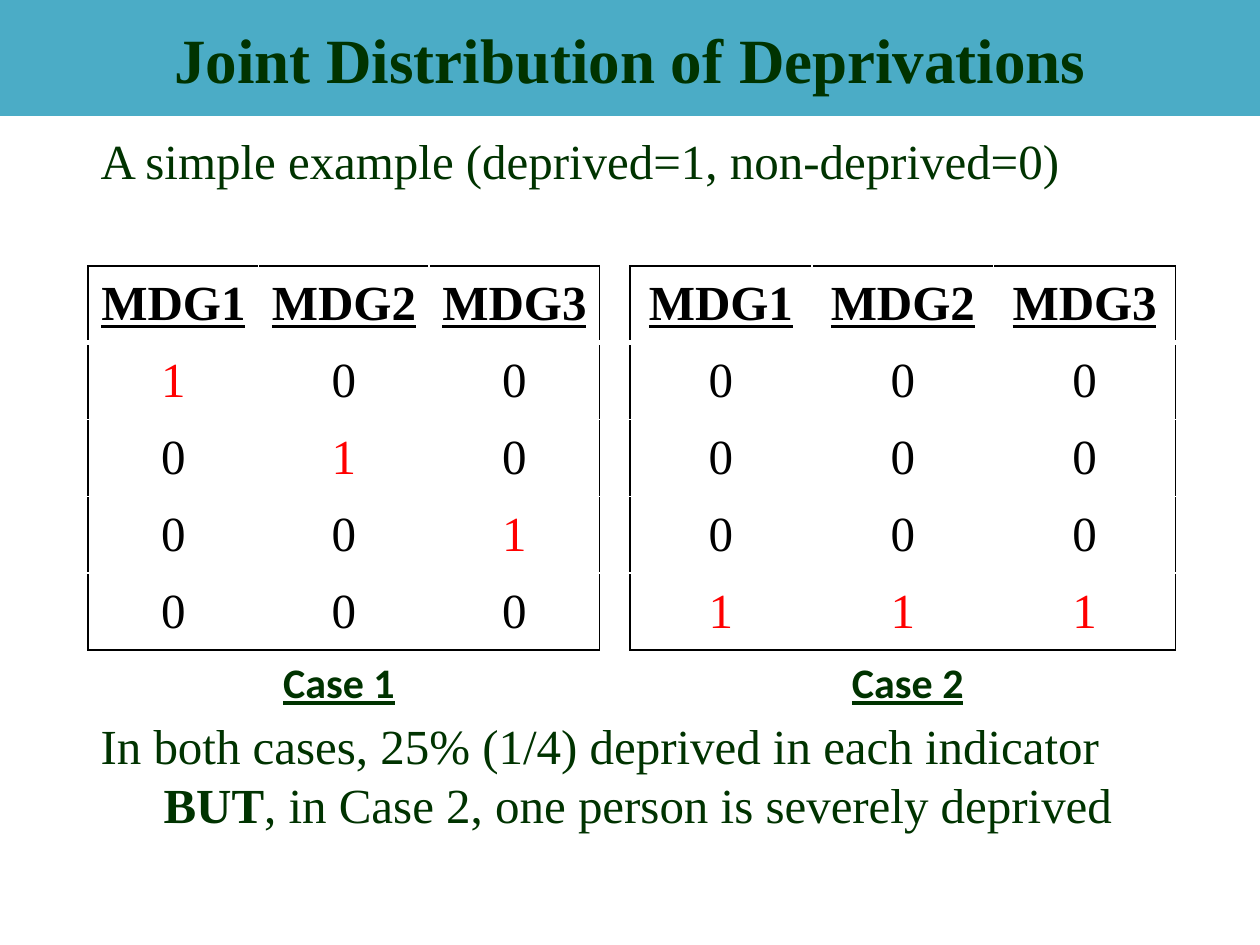
from dataclasses import dataclass
from lxml import etree
from pptx import Presentation
from pptx.dml.color import RGBColor
from pptx.enum.shapes import MSO_SHAPE
from pptx.enum.text import MSO_ANCHOR, PP_ALIGN
from pptx.oxml.ns import qn
from pptx.slide import Slide
from pptx.util import Inches, Pt

RECT = MSO_SHAPE.RECTANGLE
MIDDLE = MSO_ANCHOR.MIDDLE
LEFT, CENTER = PP_ALIGN.LEFT, PP_ALIGN.CENTER
INK = {"green": "003300", "teal": "4BACC6", "black": "000000",
       "red": "FF0000", "white": "FFFFFF"}
SERIF, SANS = "Times New Roman", "Calibri"
HEADS = ["MDG1", "MDG2", "MDG3"]
CASES = [
    ("Case 1", 7, 40.6, 7, 39.8, ["100", "010", "001", "000"]),
    ("Case 2", 50, 43.3, 50.8, 42.5, ["000", "000", "000", "111"]),
]


def hue(name):
    """Return the named colour."""
    return RGBColor.from_string(INK[name])


def write(frame, text, font=SERIF, size=28, color="green", bold=False,
          under=False, align=LEFT):
    """Fill a frame; lines become paragraphs and * toggles bold."""
    for row, line in enumerate(text.split("\n")):
        para = frame.add_paragraph() if row else frame.paragraphs[0]
        para.alignment = align
        for part, words in enumerate(line.split("*")):
            run = para.add_run()
            run.text = words
            face = run.font
            face.name, face.size = font, Pt(size)
            face.bold, face.underline = bold or part % 2 == 1, under
            face.color.rgb = hue(color)


def edge(cell, sides):
    """Draw the borders of a cell from (side, colour, points) rows."""
    props = cell._tc.get_or_add_tcPr()
    for spot, (side, color, width) in enumerate(sides):
        line = etree.Element(qn("a:ln" + side), w=str(Pt(width)))
        fill = etree.SubElement(line, qn("a:solidFill"))
        etree.SubElement(fill, qn("a:srgbClr"), val=INK[color])
        props.insert(spot, line)


@dataclass
class Page:
    """Hold the slide and its grid of 100 columns by 75 rows."""
    slide: Slide
    unit: int

    def place(self, *spans):
        """Turn grid spans into lengths."""
        return [round(span * self.unit) for span in spans]

    def banner(self, box, text):
        """Add a filled title band."""
        band = self.slide.shapes.add_shape(RECT, *self.place(*box))
        band.shadow.inherit = False
        band.fill.solid()
        band.fill.fore_color.rgb = hue("teal")
        band.line.fill.background()
        band.text_frame.vertical_anchor = MIDDLE
        write(band.text_frame, text, size=36, bold=True, align=CENTER)

    def note(self, box, text, **style):
        """Add a wrapped text box."""
        frame = self.slide.shapes.add_textbox(*self.place(*box)).text_frame
        frame.word_wrap = True
        write(frame, text, **style)

    def grid(self, box, rows):
        """Add a table framed in black with white inner lines."""
        high, wide = len(rows), len(rows[0])
        table = self.slide.shapes.add_table(high, wide, *self.place(*box)).table
        for r, row in enumerate(rows):
            for c, text in enumerate(row):
                cell, head = table.cell(r, c), r == 0
                cell.vertical_anchor = MIDDLE
                cell.fill.solid()
                cell.fill.fore_color.rgb = hue("white")
                write(cell.text_frame, text, bold=head, under=head,
                      color="red" if text == "1" else "black", align=CENTER)
                outer = {"L": c == 0, "R": c == wide - 1,
                         "T": head, "B": r == high - 1}
                edge(cell, [(side, "black" if out else "white",
                             3 if head and side == "B" else 1)
                            for side, out in outer.items()])


def main():
    """Build and save the slide."""
    deck = Presentation()
    deck.slide_width, deck.slide_height = Inches(10), Inches(7.5)
    page = Page(deck.slides.add_slide(deck.slide_layouts[6]),
                deck.slide_width // 100)
    page.banner((0, 0, 100, 9.2), "Joint Distribution of Deprivations")
    page.note((7, 9.9, 91, 5.7),
              "A simple example (deprived=1, non-deprived=0)")
    for name, left, width, start, span, rows in CASES:
        page.grid((left, 21.1, width, 30.5), [HEADS, *rows])
        page.note((start, 51.6, span, 5), name, font=SANS, size=24,
                  bold=True, under=True, align=CENTER)
    page.note((7, 56.3, 88.3, 10.4),
              "In both cases, 25% (1/4) deprived in each indicator\n"
              "\t*BUT*, in Case 2, one person is severely deprived")
    deck.save("out.pptx")


if __name__ == "__main__":
    main()
